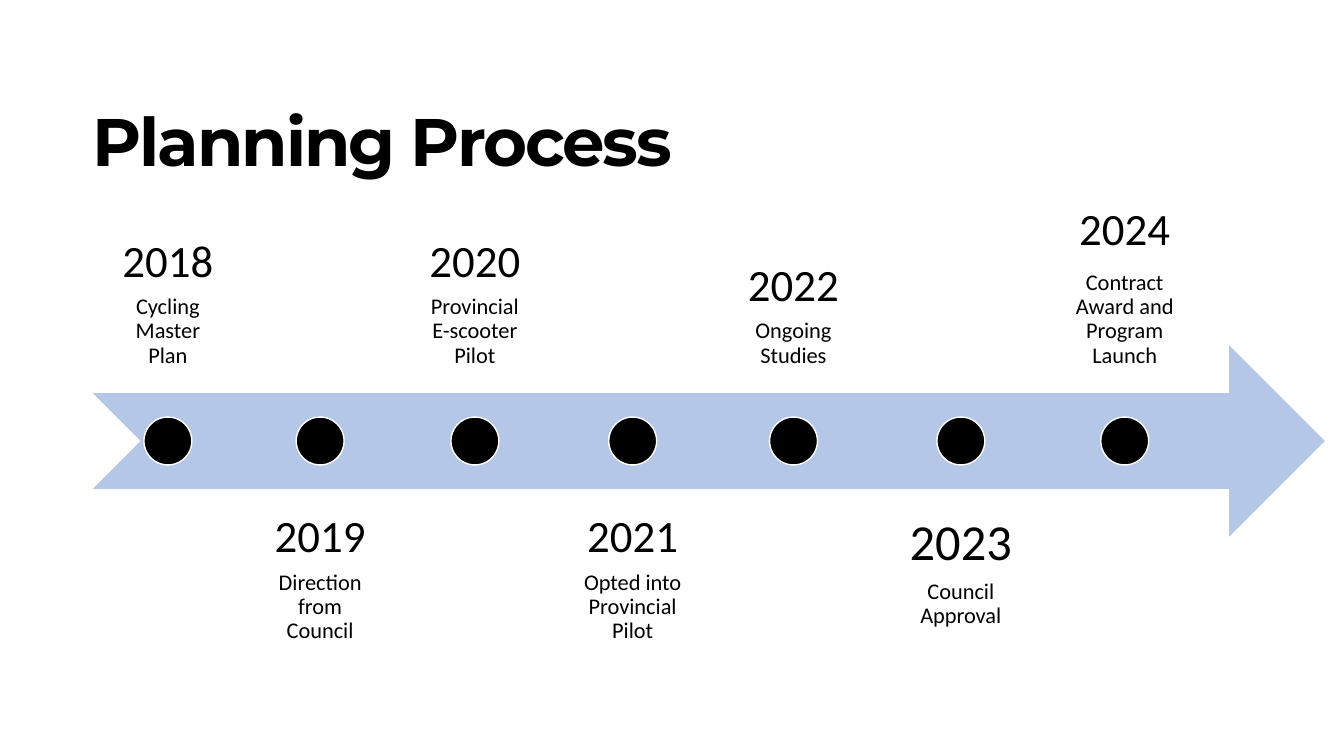
from dataclasses import dataclass

from pptx import Presentation
from pptx.dml.color import RGBColor
from pptx.enum.shapes import MSO_SHAPE
from pptx.enum.text import MSO_ANCHOR, MSO_AUTO_SIZE, PP_ALIGN
from pptx.util import Inches, Pt

ARROW, DOT = MSO_SHAPE.NOTCHED_RIGHT_ARROW, MSO_SHAPE.OVAL
TOP, BOTTOM = MSO_ANCHOR.TOP, MSO_ANCHOR.BOTTOM
LEFT, CENTER = PP_ALIGN.LEFT, PP_ALIGN.CENTER
NO_FIT = MSO_AUTO_SIZE.NONE
TITLE_ONLY = 5


@dataclass(frozen=True)
class Theme:
    ink: RGBColor = RGBColor(0, 0, 0)
    paper: RGBColor = RGBColor(255, 255, 255)
    band: RGBColor = RGBColor(0xB4, 0xC7, 0xE7)
    title_font: str = "Montserrat"
    body_font: str = "Calibri"
    title_size: int = 48
    year_size: int = 32
    large_year_size: int = 36
    event_size: int = 16


THEME = Theme()

# Timeline grid: rows of equal height, one column per year
MARGIN, GRID_TOP, ROW, GAP = 0.92, 2.0, 0.95, 0.06
ARROW_WIDTH = 12.22

# Year, event, column width, year size, space after the year, inset
MILESTONES = [
    ("2018", "Cycling Master Plan", 1.49, THEME.year_size, 6, 0.25),
    ("2019", "Direction from Council", 1.41, THEME.year_size, 6, 0.25),
    ("2020", "Provincial E-scooter Pilot", 1.54, THEME.year_size, 6, 0.25),
    ("2021", "Opted into Provincial Pilot", 1.47, THEME.year_size, 6, 0.25),
    ("2022", "Ongoing Studies", 1.6, THEME.year_size, 6, 0.25),
    ("2023", "Council Approval", 1.6, THEME.large_year_size, 6, 0.28),
    ("2024", "Contract Award and Program Launch", 1.53, THEME.year_size, 11.2, 0.25),
]


def row_top(row):
    return GRID_TOP + row * ROW


def apply_format(target, values):
    for name, value in values.items():
        setattr(target, name, value)


def format_frame(frame, anchor, insets):
    sides = ("margin_left", "margin_top", "margin_right", "margin_bottom")
    apply_format(frame, {"word_wrap": True, "auto_size": NO_FIT,
                         "vertical_anchor": anchor,
                         **{side: Inches(inset) for side, inset in zip(sides, insets)}})


def write_line(paragraph, words, font, size, align, bold=False, after=0):
    apply_format(paragraph, {"alignment": align, "line_spacing": 0.9,
                             "space_before": Pt(0), "space_after": Pt(after)})
    run = paragraph.add_run()
    run.text = words
    apply_format(run.font, {"name": font, "size": Pt(size), "bold": bold})
    run.font.color.rgb = THEME.ink
    return run


def add_title(slide, words):
    title = slide.shapes.title
    apply_format(title, {"left": Inches(MARGIN), "top": Inches(0.4),
                         "width": Inches(9.84), "height": Inches(1.45)})
    format_frame(title.text_frame, BOTTOM, (0, 0.05, 0.1, 0.05))
    heading = write_line(title.text_frame.paragraphs[0], words, THEME.title_font,
                         THEME.title_size, LEFT, bold=True)
    # Tighter letter spacing, in hundredths of a point
    heading.font._element.set("spc", "-150")


def add_figure(slide, preset, left, row, width, rows, fill, outline=None):
    figure = slide.shapes.add_shape(preset, Inches(left), Inches(row_top(row)),
                                    Inches(width), Inches(rows * ROW))
    figure.shadow.inherit = False
    figure.fill.solid()
    figure.fill.fore_color.rgb = fill
    if outline is None:
        figure.line.fill.background()
    else:
        figure.line.color.rgb = outline
        figure.line.width = Pt(1)


def add_milestone(slide, left, above, year, event, width, year_size, after, inset):
    label = slide.shapes.add_textbox(Inches(left), Inches(row_top(0 if above else 3)),
                                     Inches(width), Inches(2 * ROW))
    frame = label.text_frame
    format_frame(frame, BOTTOM if above else TOP, [inset] * 4)
    write_line(frame.paragraphs[0], year, THEME.body_font, year_size, CENTER, after=after)
    write_line(frame.add_paragraph(), event, THEME.body_font, THEME.event_size, CENTER)
    # Marker centred under or over its label
    diameter = ROW / 2
    add_figure(slide, DOT, left + (width - diameter) / 2, 2.25, diameter, 0.5,
               THEME.ink, THEME.paper)


def main():
    deck = Presentation()
    deck.slide_width, deck.slide_height = Inches(13.33), Inches(7.5)
    slide = deck.slides.add_slide(deck.slide_layouts[TITLE_ONLY])

    add_title(slide, "Planning Process")
    add_figure(slide, ARROW, MARGIN, 1.5, ARROW_WIDTH, 2, THEME.band)

    # Labels alternate above and below the arrow
    left = MARGIN
    for index, (year, event, width, *style) in enumerate(MILESTONES):
        add_milestone(slide, left, index % 2 == 0, year, event, width, *style)
        left += width + GAP

    deck.save("out.pptx")


if __name__ == "__main__":
    main()
